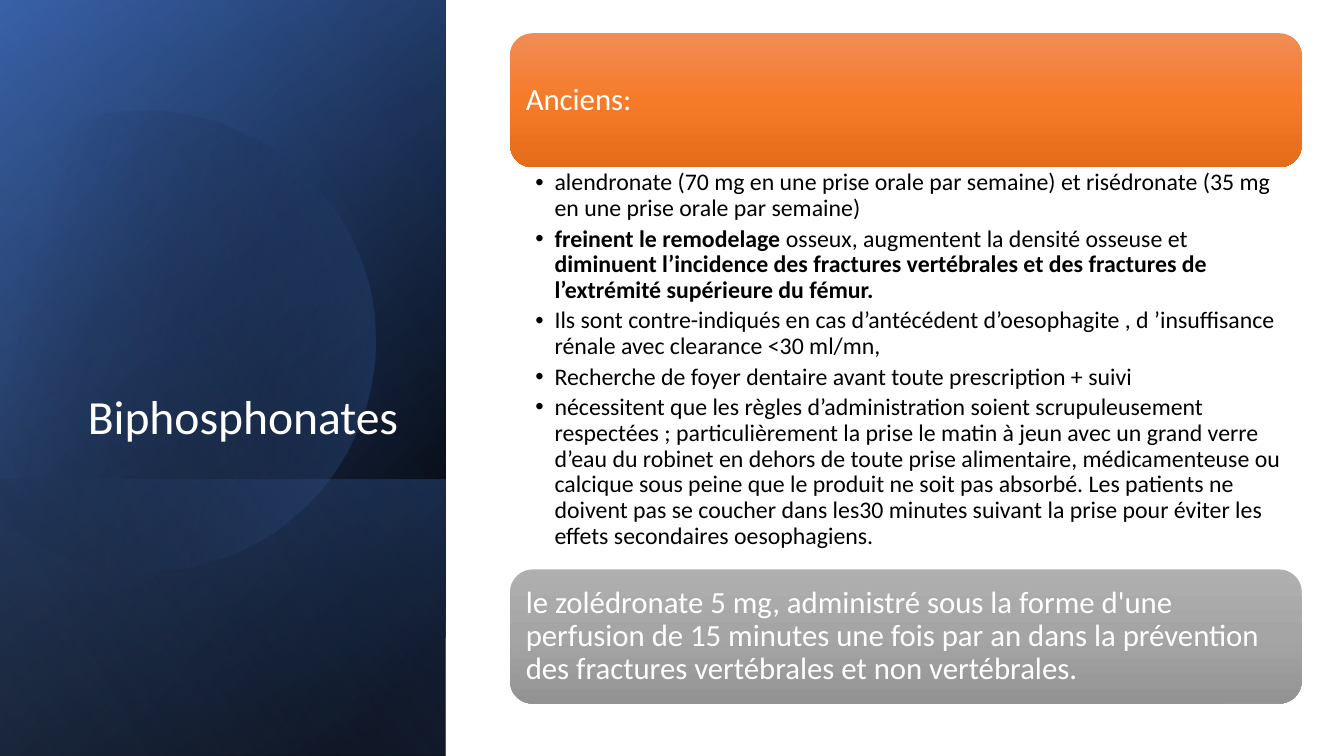
from math import cos, radians, sin

from lxml import etree
from pptx import Presentation
from pptx.dml.color import RGBColor
from pptx.enum.shapes import MSO_SHAPE
from pptx.enum.text import MSO_ANCHOR, PP_ALIGN
from pptx.oxml.ns import qn
from pptx.util import Pt

RECT, ROUND = MSO_SHAPE.RECTANGLE, MSO_SHAPE.ROUNDED_RECTANGLE
LEFT, RIGHT = PP_ALIGN.LEFT, PP_ALIGN.RIGHT
TOP, MIDDLE, BOTTOM = MSO_ANCHOR.TOP, MSO_ANCHOR.MIDDLE, MSO_ANCHOR.BOTTOM
PX = 9144  # 100 px to the inch
FONT = "Calibri"
COLORS = {
    "black": "000000", "white": "FFFFFF", "navy": "2F5597",
    "blue": "4472C4", "sky": "8FAADC",
    "peach": "F18C57", "orange": "F67B28", "rust": "E56C19",
    "silver": "AFAFAF", "gray": "A5A5A5", "slate": "939393",
}

# Content
TITLE = "Biphosphonates"
CARDS = [
    (33, "Anciens:", ("peach", "orange", "rust")),
    (565, "le zolédronate 5 mg, administré sous la forme d'une perfusion de "
          "15 minutes une fois par an dans la prévention des fractures "
          "vertébrales et non vertébrales.", ("silver", "gray", "slate")),
]
# Each bullet is a list of (text, bold)
BULLETS = [
    [("alendronate (70 mg en une prise orale par semaine) et risédronate "
      "(35 mg en une prise orale par semaine)", False)],
    [("freinent le remodelage ", True),
     ("osseux, augmentent la densité osseuse et ", False),
     ("diminuent l’incidence des fractures vertébrales et des fractures de "
      "l’extrémité supérieure du fémur.", True)],
    [("Ils sont contre-indiqués en cas d’antécédent d’oesophagite , "
      "d ’insuffisance rénale avec clearance <30 ml/mn,", False)],
    [("Recherche de foyer dentaire avant toute prescription + suivi", False)],
    [("nécessitent que les règles d’administration soient scrupuleusement "
      "respectées ; particulièrement la prise le matin à jeun avec un grand "
      "verre d’eau du robinet en dehors de toute prise alimentaire, "
      "médicamenteuse ou calcique sous peine que le produit ne soit pas "
      "absorbé. Les patients ne doivent pas se coucher dans les30 minutes "
      "suivant la prise pour éviter les effets secondaires oesophagiens.",
      False)],
]
# Side panel layers: top, height, angle, stops of (position, colour, opacity)
BASE = (0, 750, 50, [(8, "black", 100), (100, "navy", 100)])
GLOW = (0, 750, 30, [(0, "black", 0), (99, "blue", 46)])
BAND = (476, 274, 130, [(2, "blue", 29), (100, "black", 30)])
SHEEN = (0, 750, 120, [(0, "black", 0), (99, "sky", 11)])
DISC = [(29, "black", 0), (100, "blue", 43)]
SIDE = 442
CARD_X, CARD_W, CARD_H = 506, 785, 133


def box(x, y, w, h):
    return [round(v * PX) for v in (x, y, w, h)]


def shade(shape, angle, stops):
    """Gradient fill without outline or shadow."""
    shape.shadow.inherit = False
    shape.line.fill.background()
    shape.fill.gradient()
    grad = shape._element.spPr.find(qn("a:gradFill"))
    for child in list(grad):
        grad.remove(child)
    grad.set("rotWithShape", "1")
    group = etree.SubElement(grad, qn("a:gsLst"))
    for pos, name, alpha in stops:
        stop = etree.SubElement(group, qn("a:gs"), pos=str(pos * 1000))
        color = etree.SubElement(stop, qn("a:srgbClr"), val=COLORS[name])
        if alpha < 100:
            etree.SubElement(color, qn("a:alpha"), val=str(alpha * 1000))
    etree.SubElement(grad, qn("a:lin"), ang=str(angle * 60000), scaled="0")


def layer(shapes, top, high, angle, stops):
    """Rectangle turned by 90 degrees and mirrored."""
    left = (SIDE - high) / 2
    shape = shapes.add_shape(
        RECT, *box(left, top + (high - SIDE) / 2, high, SIDE))
    shape.rotation = 90
    shape._element.spPr.find(qn("a:xfrm")).set("flipH", "1")
    shade(shape, angle, stops)


def setup(frame, anchor, pads):
    frame.word_wrap = True
    frame.vertical_anchor = anchor
    (frame.margin_left, frame.margin_top,
     frame.margin_right, frame.margin_bottom) = [v * PX for v in pads]


def style(par, size, color, align=LEFT):
    par.alignment = align
    par.line_spacing = 0.9
    for run in par.runs:
        run.font.name = FONT
        run.font.size = Pt(size)
        run.font.color.rgb = RGBColor.from_string(COLORS[color])


def bullet(par):
    props = par._p.get_or_add_pPr()
    props.set("marL", str(19 * PX))
    props.set("indent", str(-19 * PX))
    etree.SubElement(props, qn("a:buFont"), typeface="Arial")
    etree.SubElement(props, qn("a:buChar"), char="•")


def main():
    deck = Presentation()
    deck.slide_width, deck.slide_height = 1333 * PX, 750 * PX
    slide = deck.slides.add_slide(deck.slide_layouts[5])
    shapes = slide.shapes
    title = shapes.title

    # Side panel
    for item in (BASE, GLOW, BAND):
        layer(shapes, *item)

    # Disc, cut off at the left
    points = [(143.5 + 228.5 * cos(radians(a)), 334.5 + 228.5 * sin(radians(a)))
              for a in range(-117, 151, 3)]
    path = shapes.build_freeform(*points[0], scale=PX)
    path.add_line_segments(points[1:], close=True)
    disc = path.convert_to_shape()
    disc.rotation = -16.1
    shade(disc, 30, DISC)
    layer(shapes, *SHEEN)

    # Title, moved in front of the panel
    shapes._spTree.append(title._element)
    title.left, title.top, title.width, title.height = box(64, 184, 341, 262)
    title.text_frame.text = TITLE
    setup(title.text_frame, BOTTOM, (10, 5, 10, 5))
    style(title.text_frame.paragraphs[0], 34, "white", RIGHT)

    # Cards
    for top, text, tones in CARDS:
        card = shapes.add_shape(ROUND, *box(CARD_X, top, CARD_W, CARD_H))
        shade(card, 90, [(p, c, 100) for p, c in zip((0, 50, 100), tones)])
        card.text_frame.text = text
        setup(card.text_frame, MIDDLE, (9, 9, 9, 9))
        style(card.text_frame.paragraphs[0], 22, "white")

    # Bullets, filling the gap between the cards
    start = CARDS[0][0] + CARD_H
    area = shapes.add_textbox(
        *box(CARD_X, start, CARD_W, CARDS[1][0] - start))
    frame = area.text_frame
    setup(frame, TOP, (25, 3, 17, 3))
    for i, parts in enumerate(BULLETS):
        par = frame.add_paragraph() if i else frame.paragraphs[0]
        for text, bold in parts:
            run = par.add_run()
            run.text = text
            run.font.bold = bold
        style(par, 17, "black")
        par.space_after = Pt(3.4)
        bullet(par)

    deck.save("out.pptx")


if __name__ == "__main__":
    main()
